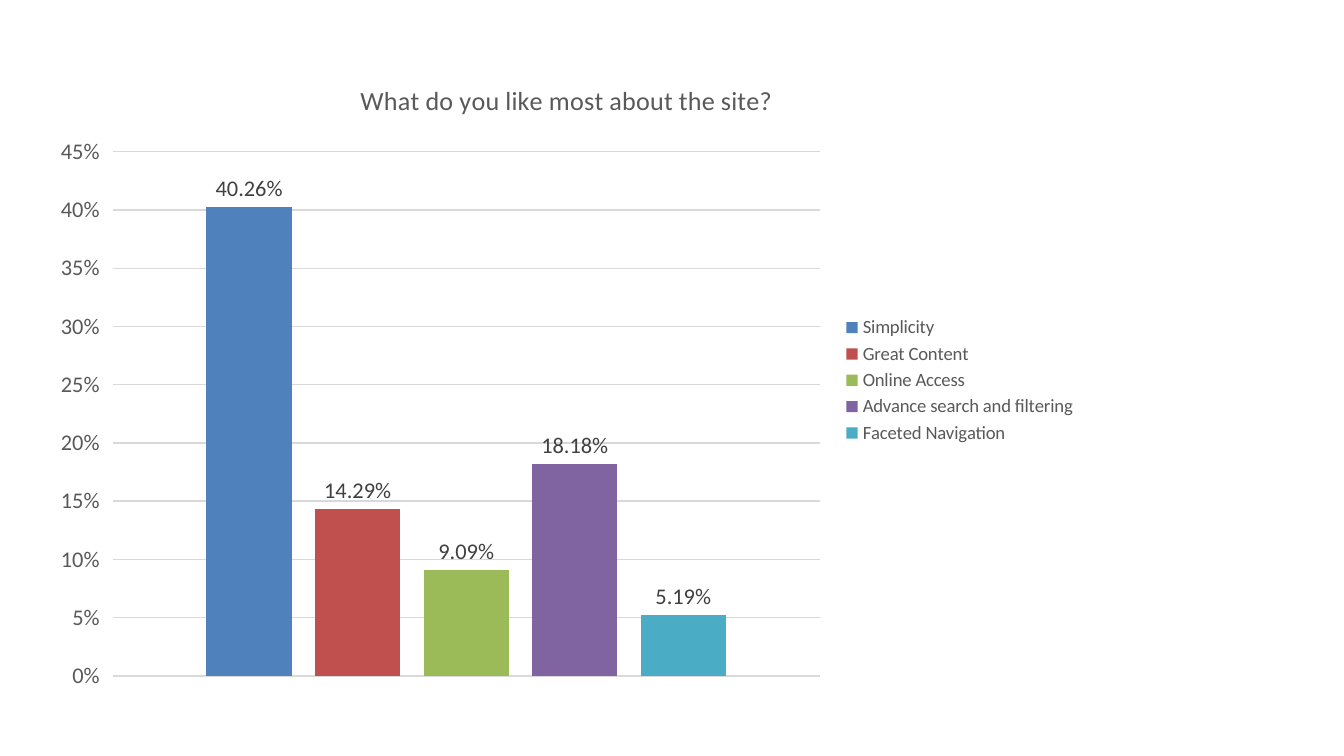
from lxml import etree
from pptx import Presentation
from pptx.chart.data import CategoryChartData
from pptx.dml.color import RGBColor
from pptx.enum.chart import XL_CHART_TYPE, XL_LABEL_POSITION, XL_LEGEND_POSITION, XL_TICK_MARK
from pptx.oxml.ns import qn
from pptx.util import Inches, Pt

WIDTH = Inches(10)
HEIGHT = WIDTH * 9 // 16
GRAY = RGBColor(0x59, 0x59, 0x59)
DARK = RGBColor(0x40, 0x40, 0x40)
GRID = RGBColor(0xD9, 0xD9, 0xD9)
FONT = "Calibri"
TITLE = "What do you like most about the site?"
ANSWERS = [
    ("Simplicity", 0.4026, RGBColor(0x4F, 0x81, 0xBD)),
    ("Great Content ", 0.1429, RGBColor(0xC0, 0x50, 0x4D)),
    ("Online Access", 0.0909, RGBColor(0x9B, 0xBB, 0x59)),
    ("Advance search and filtering ", 0.1818, RGBColor(0x80, 0x64, 0xA2)),
    ("Faceted Navigation ", 0.0519, RGBColor(0x4B, 0xAC, 0xC6)),
]


def style_font(font, size, color):
    font.name = FONT
    font.size = Pt(size)
    font.bold = False
    font.color.rgb = color


def add_column_chart(slide):
    data = CategoryChartData(number_format="0.00%")
    data.categories = ["1"]
    for name, share, _ in ANSWERS:
        data.add_series(name, [share])
    frame = slide.shapes.add_chart(
        XL_CHART_TYPE.COLUMN_CLUSTERED,
        Inches(0.29), Inches(0.43), Inches(7.85), Inches(4.8), data)
    chart = frame.chart
    style_font(chart.font, 10, GRAY)
    return chart


def add_title(chart):
    chart.has_title = True
    span = chart.chart_title.text_frame.paragraphs[0].add_run()
    span.text = TITLE
    style_font(span.font, 14, GRAY)
    chart.chart_title.include_in_layout = False


def add_legend(chart):
    chart.has_legend = True
    chart.legend.position = XL_LEGEND_POSITION.RIGHT
    chart.legend.include_in_layout = False
    style_font(chart.legend.font, 10, GRAY)


def style_axes(chart):
    chart.category_axis.visible = False
    axis = chart.value_axis
    axis.minimum_scale, axis.maximum_scale, axis.major_unit = 0, 0.45, 0.05
    axis.major_tick_mark = XL_TICK_MARK.OUTSIDE
    axis.minor_tick_mark = XL_TICK_MARK.NONE
    axis.format.line.fill.background()
    axis.tick_labels.number_format = "0%"
    axis.tick_labels.number_format_is_linked = False
    style_font(axis.tick_labels.font, 12, GRAY)
    grid_line = axis.major_gridlines.format.line
    grid_line.color.rgb = GRID
    grid_line.width = Pt(0.75)


def style_columns(chart):
    plot = chart.plots[0]
    plot.vary_by_categories = False
    plot.gap_width, plot.overlap = 219, -27
    for series, (_, _, color) in zip(plot.series, ANSWERS):
        series.format.fill.solid()
        series.format.fill.fore_color.rgb = color
        labels = series.data_labels
        labels.show_value = True
        labels.position = XL_LABEL_POSITION.OUTSIDE_END
        labels.number_format = "0.00%"
        labels.number_format_is_linked = False
        style_font(labels.font, 12, DARK)


def place_plot(chart, left, top, width, height):
    """Set the inner plot area as shares of the chart's size."""
    plot_area = chart.plots[0]._element.getparent()
    for old in plot_area.findall(qn("c:layout")):
        plot_area.remove(old)
    layout = etree.Element(qn("c:layout"))
    manual = etree.SubElement(layout, qn("c:manualLayout"))
    settings = {"layoutTarget": "inner", "xMode": "edge", "yMode": "edge",
                "x": left, "y": top, "w": width, "h": height}
    for name, value in settings.items():
        etree.SubElement(manual, qn(f"c:{name}")).set("val", str(value))
    plot_area.insert(0, layout)


def main():
    deck = Presentation()
    deck.slide_width, deck.slide_height = WIDTH, HEIGHT
    slide = deck.slides.add_slide(deck.slide_layouts[6])
    chart = add_column_chart(slide)
    add_title(chart)
    add_legend(chart)
    style_axes(chart)
    style_columns(chart)
    plot_top, plot_bottom = Inches(1.13), Inches(5.03)
    chart_top, chart_height = Inches(0.43), Inches(4.8)
    place_plot(chart, 0.07, (plot_top - chart_top) / chart_height,
               0.67, (plot_bottom - plot_top) / chart_height)
    deck.save("out.pptx")


if __name__ == "__main__":
    main()
